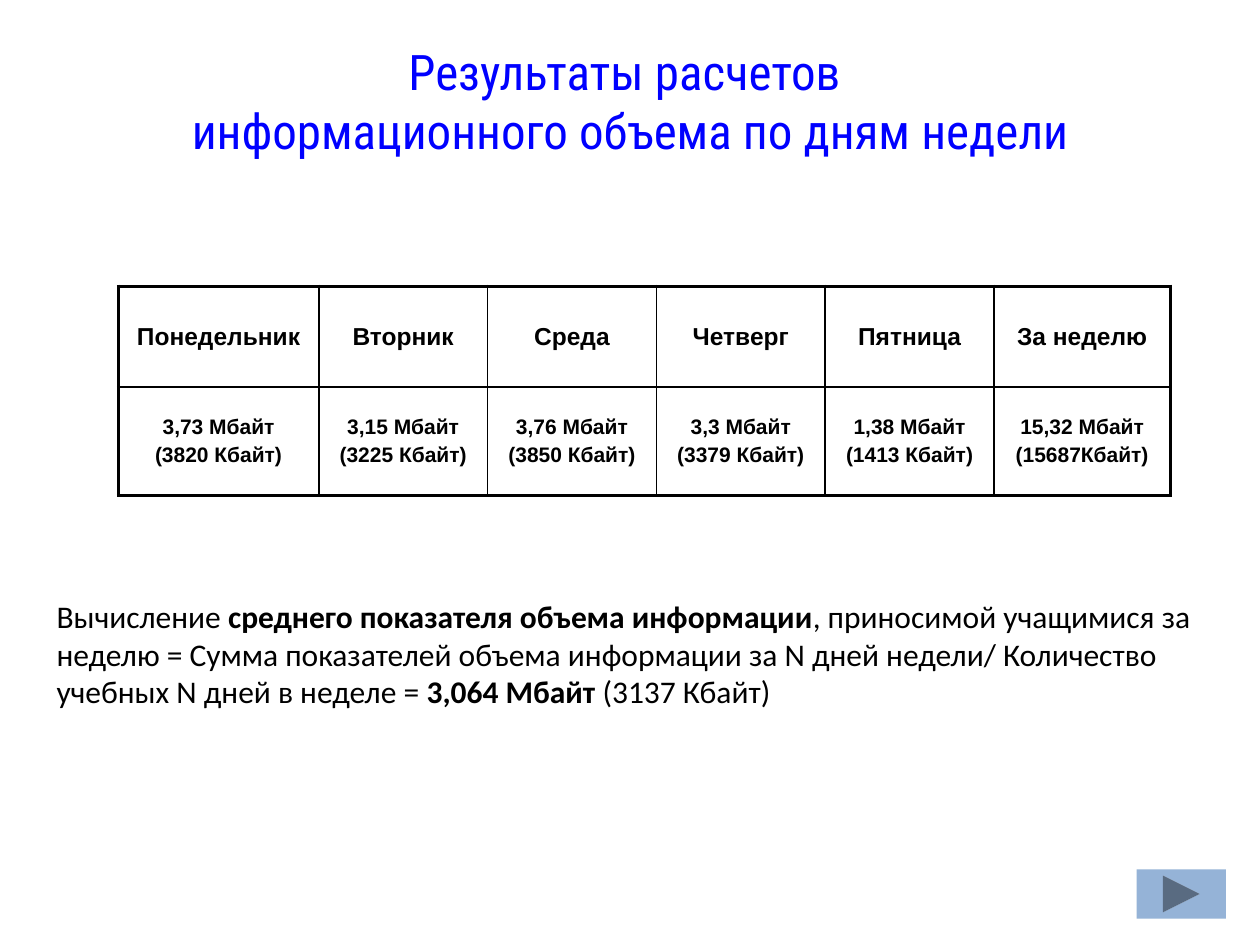
from dataclasses import dataclass

from lxml import etree
from pptx import Presentation
from pptx import util as u
from pptx.dml.color import RGBColor
from pptx.enum import shapes, text
from pptx.oxml.ns import qn

SLIDE_W, SLIDE_H = 10, 7.5
BLACK, BLUE, BUTTON_BLUE = "000000", "0000FF", "95B3D7"
THIN, THICK = 1, 2.25
COLUMN_WIDTHS = [1.59, 1.34, 1.34, 1.34, 1.34, 1.4]
ROW_HEIGHTS = [0.8, 0.86]


@dataclass
class Day:
    name: str
    megabytes: str
    kilobytes: str


@dataclass
class Box:
    """A frame given as shares of the slide's width and height."""
    left: float
    top: float
    width: float
    height: float

    def lengths(self) -> list:
        shares = (self.left, self.top, self.width, self.height)
        sides = (SLIDE_W, SLIDE_H, SLIDE_W, SLIDE_H)
        return [u.Inches(share * side) for share, side in zip(shares, sides)]


DAYS = [
    Day("Понедельник", "3,73 Мбайт", "(3820 Кбайт)"),
    Day("Вторник", "3,15 Мбайт", "(3225 Кбайт)"),
    Day("Среда", "3,76 Мбайт", "(3850 Кбайт)"),
    Day("Четверг", "3,3 Мбайт", "(3379 Кбайт)"),
    Day("Пятница", "1,38 Мбайт", "(1413 Кбайт)"),
    Day("За неделю", "15,32 Мбайт", "(15687Кбайт)"),
]

# Each run of the conclusion with its boldness
CONCLUSION = [
    ("Вычисление ", False),
    ("среднего показателя объема информации", True),
    (", приносимой учащимися за неделю = Сумма показателей объема информации "
     "за N дней недели/ Количество учебных N дней в неделе =", False),
    (" 3,064 Мбайт", True),
    (" (3137 Кбайт)", False),
]


def color(hex_value: str) -> RGBColor:
    return RGBColor.from_string(hex_value)


def write(frame, paragraphs: list, *, size: float, font: str, ink: str = BLACK,
          align=text.PP_ALIGN.LEFT, before: float = 0) -> None:
    """Fill a text frame with paragraphs, each a list of (text, bold) runs."""
    for index, runs in enumerate(paragraphs):
        paragraph = frame.add_paragraph() if index else frame.paragraphs[0]
        paragraph.alignment = align
        paragraph.space_before = u.Pt(before)
        for words, bold in runs:
            run = paragraph.add_run()
            run.text = words
            run.font.size, run.font.name, run.font.bold = u.Pt(size), font, bold
            run.font.color.rgb = color(ink)


def set_borders(cell, widths: dict) -> None:
    """Draw cell borders; the lines must precede the fill in the XML."""
    properties = cell._tc.get_or_add_tcPr()
    for index, side in enumerate("LRTB"):
        line = etree.Element(qn(f"a:ln{side}"), w=str(u.Pt(widths[side])))
        fill = etree.SubElement(line, qn("a:solidFill"))
        etree.SubElement(fill, qn("a:srgbClr"), val=BLACK)
        properties.insert(index, line)


def add_title(slide) -> None:
    title = slide.shapes.title
    title.left, title.top, title.width, title.height = Box(0.117, 0.037, 0.766, 0.19).lengths()
    frame = title.text_frame
    frame.auto_size = text.MSO_AUTO_SIZE.NONE
    frame.vertical_anchor = text.MSO_ANCHOR.TOP
    write(frame, [[("Результаты расчетов ", False)],
                  [("информационного объема по дням недели", False)]],
          size=28, font="Roboto Condensed", ink=BLUE, align=text.PP_ALIGN.CENTER)


def add_days_table(slide, days: list[Day]) -> None:
    frame = Box(0.094, 0.303, sum(COLUMN_WIDTHS) / SLIDE_W, sum(ROW_HEIGHTS) / SLIDE_H)
    table = slide.shapes.add_table(len(ROW_HEIGHTS), len(days), *frame.lengths()).table
    table.first_row = table.horz_banding = False
    for column, width in zip(table.columns, COLUMN_WIDTHS):
        column.width = u.Inches(width)
    for row, height in zip(table.rows, ROW_HEIGHTS):
        row.height = u.Inches(height)

    last_row, last_column = len(ROW_HEIGHTS) - 1, len(days) - 1
    for column, day in enumerate(days):
        for row, (lines, size) in enumerate([([day.name], 14),
                                             ([day.megabytes, day.kilobytes], 12)]):
            cell = table.cell(row, column)
            cell.fill.background()
            cell.vertical_anchor = text.MSO_ANCHOR.MIDDLE
            write(cell.text_frame, [[(line, True)] for line in lines], size=size,
                  font="Arial", align=text.PP_ALIGN.CENTER, before=0.2 * size)
            outer = {"L": column == 0, "R": column == last_column,
                     "T": row == 0, "B": row == last_row}
            set_borders(cell, {side: THICK if edge else THIN
                               for side, edge in outer.items()})


def add_conclusion(slide) -> None:
    frame = slide.shapes.add_textbox(*Box(0.035, 0.625, 0.929, 0.135).lengths()).text_frame
    frame.word_wrap = True
    write(frame, [CONCLUSION], size=18, font="Calibri")


def add_next_button(slide) -> None:
    button = slide.shapes.add_shape(shapes.MSO_SHAPE.ACTION_BUTTON_FORWARD_OR_NEXT,
                                    *Box(0.902, 0.92, 0.071, 0.052).lengths())
    button.shadow.inherit = False
    button.fill.solid()
    button.fill.fore_color.rgb = color(BUTTON_BLUE)
    button.line.fill.background()


def main() -> None:
    deck = Presentation()
    deck.slide_width, deck.slide_height = u.Inches(SLIDE_W), u.Inches(SLIDE_H)
    slide = deck.slides.add_slide(deck.slide_layouts[5])
    add_title(slide)
    add_days_table(slide, DAYS)
    add_conclusion(slide)
    add_next_button(slide)
    deck.save("out.pptx")


if __name__ == "__main__":
    main()
